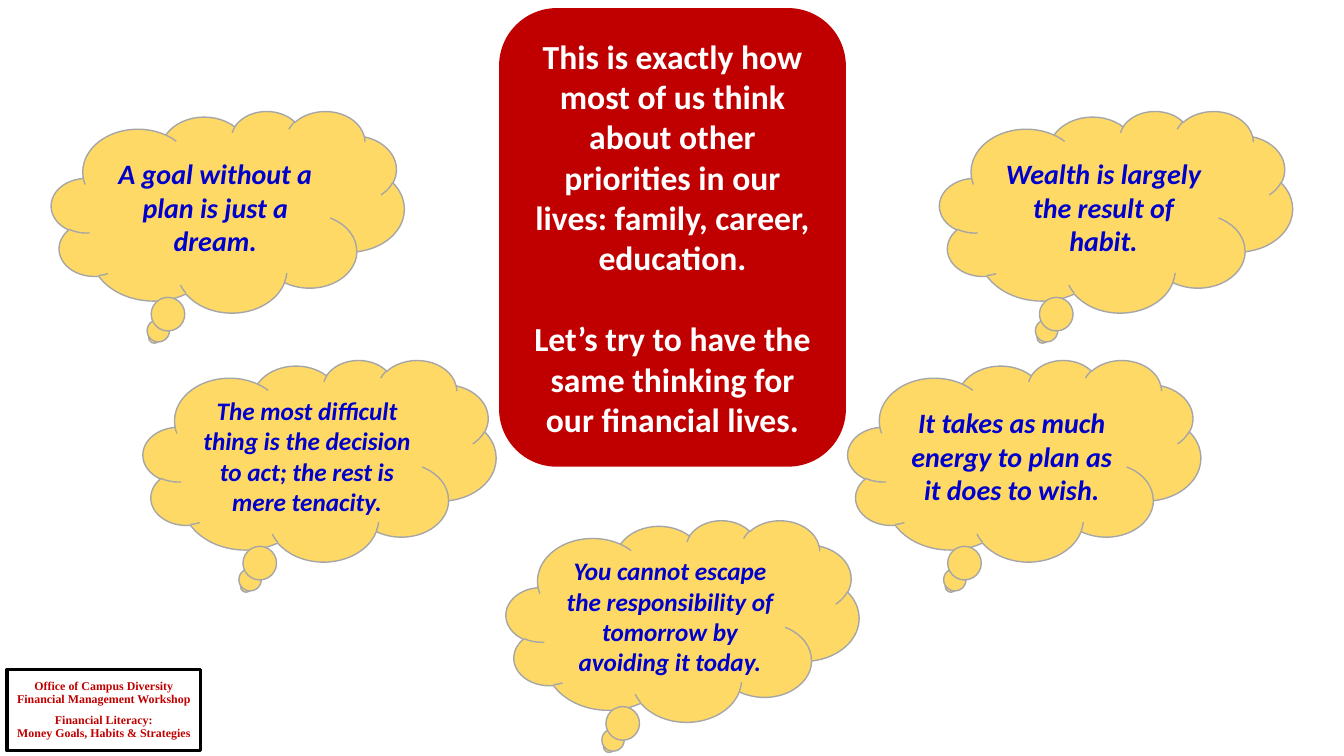
"""Build a slide of financial quotes in thought clouds around a central message."""
from pptx import Presentation
from pptx import util as u
from pptx.dml.color import RGBColor
from pptx.enum import shapes, text

RED = RGBColor(0xC0, 0x00, 0x00)
WHITE = RGBColor(0xFF, 0xFF, 0xFF)
BLACK = RGBColor(0x00, 0x00, 0x00)
GOLD = RGBColor(0xFF, 0xD9, 0x66)
GRAY = RGBColor(0xA6, 0xA6, 0xA6)
BLUE = RGBColor(0x00, 0x00, 0xCC)

LABEL = [
    ("Office of Campus Diversity", 0),
    ("Financial Management Workshop", 0),
    ("Financial Literacy:", 6.5),
    ("Money Goals, Habits & Strategies", 0),
]
MESSAGE = [
    ("This is exactly how most of us think about other priorities in our lives: "
     "family, career, education.", 0),
    ("Let’s try to have the same thinking for our financial lives.", 29),
]
CLOUD_SIZE = (3.5, 2)
CLOUDS = [
    (0.51, 1.1, 20, "A goal without a plan is just a dream."),
    (1.42, 3.57, 18, "The most difficult thing is the decision to act; the rest is mere tenacity."),
    (9.32, 1.1, 20, "Wealth is largely the result of habit."),
    (8.41, 3.57, 20, "It takes as much energy to plan as it does to wish."),
    (5.02, 5.16, 18, "You cannot escape the responsibility of tomorrow by avoiding it today."),
]
LABEL_FONT = {"name": "Times New Roman", "size": u.Pt(8.5), "bold": True}
MESSAGE_FONT = {"name": "Calibri", "size": u.Pt(24), "bold": True}
CLOUD_FONT = {"name": "Calibri", "bold": True, "italic": True}


def add_panel(slide, kind, box, fill, line, paragraphs, font, color, spacing=1.0, inset=0.1):
    shape = slide.shapes.add_shape(kind, *map(u.Inches, box))
    shape.shadow.inherit = False
    if fill is None:
        shape.fill.background()
    else:
        shape.fill.solid()
        shape.fill.fore_color.rgb = fill
    if line is None:
        shape.line.fill.background()
    else:
        shape.line.color.rgb, shape.line.width = line
    frame = shape.text_frame
    frame.word_wrap = True
    frame.vertical_anchor = text.MSO_ANCHOR.MIDDLE
    frame.margin_left = frame.margin_right = u.Inches(inset)
    for index, (words, before) in enumerate(paragraphs):
        paragraph = frame.add_paragraph() if index else frame.paragraphs[0]
        paragraph.text = words
        paragraph.alignment = text.PP_ALIGN.CENTER
        paragraph.line_spacing = spacing
        if before:
            paragraph.space_before = u.Pt(before)
        for name, value in font.items():
            setattr(paragraph.font, name, value)
        paragraph.font.color.rgb = color


def main():
    presentation = Presentation()
    presentation.slide_width = u.Inches(13.33)
    presentation.slide_height = u.Inches(7.5)
    slide = presentation.slides.add_slide(presentation.slide_layouts[6])
    kinds = shapes.MSO_SHAPE
    add_panel(slide, kinds.RECTANGLE, (0.07, 6.64, 1.92, 0.81), None, (BLACK, u.Pt(2.25)),
              LABEL, LABEL_FONT, RED, spacing=0.9, inset=0.05)
    add_panel(slide, kinds.ROUNDED_RECTANGLE, (4.95, 0.08, 3.44, 4.55), RED, None,
              MESSAGE, MESSAGE_FONT, WHITE)
    for left, top, size, quote in CLOUDS:
        add_panel(slide, kinds.CLOUD_CALLOUT, (left, top, *CLOUD_SIZE), GOLD, (GRAY, u.Pt(1)),
                  [(quote, 0)], {**CLOUD_FONT, "size": u.Pt(size)}, BLUE)
    presentation.save("out.pptx")


if __name__ == "__main__":
    main()
